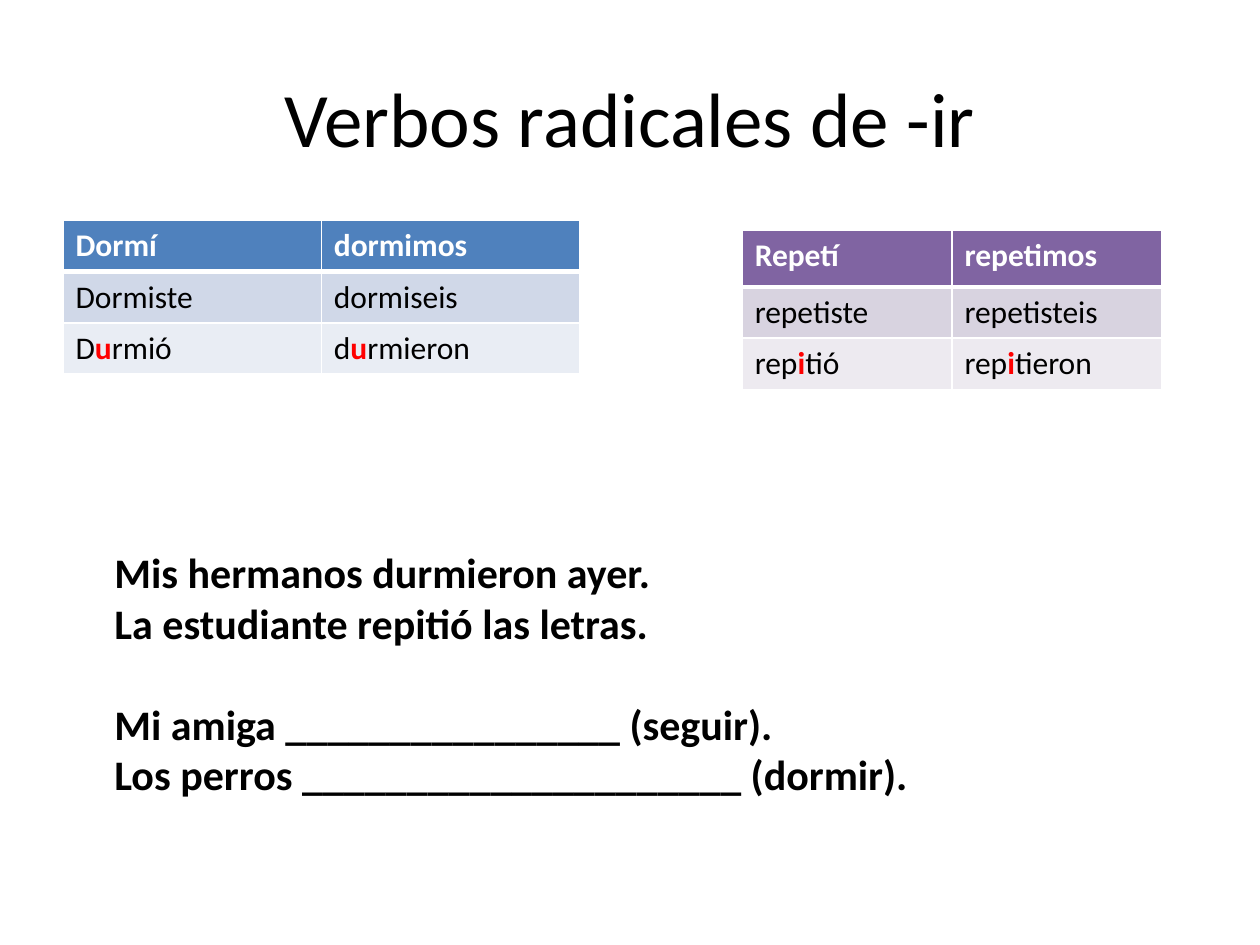
from lxml.etree import SubElement
from pptx import Presentation
from pptx.dml.color import RGBColor
from pptx.enum.text import MSO_ANCHOR, PP_ALIGN
from pptx.oxml.ns import qn
from pptx.util import Inches, Pt

COLUMNS, ROWS = 100, 75
BLACK, WHITE, RED = "000000", "FFFFFF", "FF0000"
BODY = {"name": "Calibri", "size": Pt(18), "bold": False}
STRONG = {**BODY, "bold": True}

DORMIR = [("Dormí", "dormimos"),
          ("Dormiste", "dormiseis"),
          ("D*u*rmió", "d*u*rmieron")]
REPETIR = [("Repetí", "repetimos"),
           ("repetiste", "repetisteis"),
           ("rep*i*tió", "rep*i*tieron")]
EXAMPLES = ["Mis hermanos durmieron ayer.",
            "La estudiante repitió las letras."]
EXERCISES = ["Mi amiga ________________ (seguir).",
             "Los perros _____________________ (dormir)."]


def colour(value):
    return RGBColor.from_string(value)


def grid(deck, left, top, width, height):
    """Turn grid columns and rows into slide lengths."""
    column, row = deck.slide_width / COLUMNS, deck.slide_height / ROWS
    return [int(length) for length in
            (left * column, top * row, width * column, height * row)]


def add_span(para, text, values, shade):
    span = para.add_run()
    span.text = text
    for name, value in values.items():
        setattr(span.font, name, value)
    span.font.color.rgb = colour(shade)


def add_title(page, box, text):
    title = page.shapes.title
    title.left, title.top, title.width, title.height = box
    title.text_frame.vertical_anchor = MSO_ANCHOR.MIDDLE
    para = title.text_frame.paragraphs[0]
    para.alignment = PP_ALIGN.CENTER
    add_span(para, text, {**BODY, "size": Pt(44)}, BLACK)


def add_borders(cell, widths):
    properties = cell._tc.get_or_add_tcPr()
    for side, width in widths.items():
        line = SubElement(properties, qn(f"a:ln{side}"), w=str(Pt(width)))
        fill = SubElement(line, qn("a:solidFill"))
        SubElement(fill, qn("a:srgbClr"), val=WHITE)


def add_verb_table(page, box, forms, fills, row_shares):
    """Place a verb table; a stem vowel between asterisks is stressed in red."""
    table = page.shapes.add_table(len(forms), len(forms[0]), *box).table
    for row, share in zip(table.rows, row_shares):
        row.height = int(box[3] * share / sum(row_shares))
    for row_index, (words, fill) in enumerate(zip(forms, fills)):
        header = row_index == 0
        for column_index, word in enumerate(words):
            cell = table.cell(row_index, column_index)
            add_borders(cell, {"L": 1, "R": 1, "T": 3 if row_index == 1 else 1,
                               "B": 3 if header else 1})
            cell.fill.solid()
            cell.fill.fore_color.rgb = colour(fill)
            para = cell.text_frame.paragraphs[0]
            for part_index, part in enumerate(word.split("*")):
                if part_index % 2:
                    add_span(para, part, STRONG, RED)
                elif header:
                    add_span(para, part, STRONG, WHITE)
                else:
                    add_span(para, part, BODY, BLACK)


def add_sentences(page, box, groups):
    """Place groups of sentences, one line apart."""
    frame = page.shapes.add_textbox(*box).text_frame
    frame.word_wrap = True
    para = None
    for group in groups:
        for index, sentence in enumerate(group):
            first = para is None
            para = frame.paragraphs[0] if first else frame.add_paragraph()
            if index == 0 and not first:
                para.space_before = Pt(29)
            add_span(para, sentence, {**STRONG, "size": Pt(24)}, BLACK)


def main():
    deck = Presentation()
    deck.slide_width, deck.slide_height = Inches(10), Inches(7.5)
    page = deck.slides.add_slide(deck.slide_layouts[5])
    add_title(page, grid(deck, 5, 3, 90, 12.5), "Verbos radicales de -ir")
    add_verb_table(page, grid(deck, 5, 17.5, 41, 12.2), DORMIR,
                   ("4F81BD", "D0D8E8", "E9EDF4"), (1, 1, 1))
    add_verb_table(page, grid(deck, 58.9, 18.3, 33.3, 12.6), REPETIR,
                   ("8064A2", "D8D3E0", "EDEAF0"), (1.1, 1, 1))
    add_sentences(page, grid(deck, 8.1, 42.9, 86.9, 24.2),
                  (EXAMPLES, EXERCISES))
    deck.save("out.pptx")


if __name__ == "__main__":
    main()
